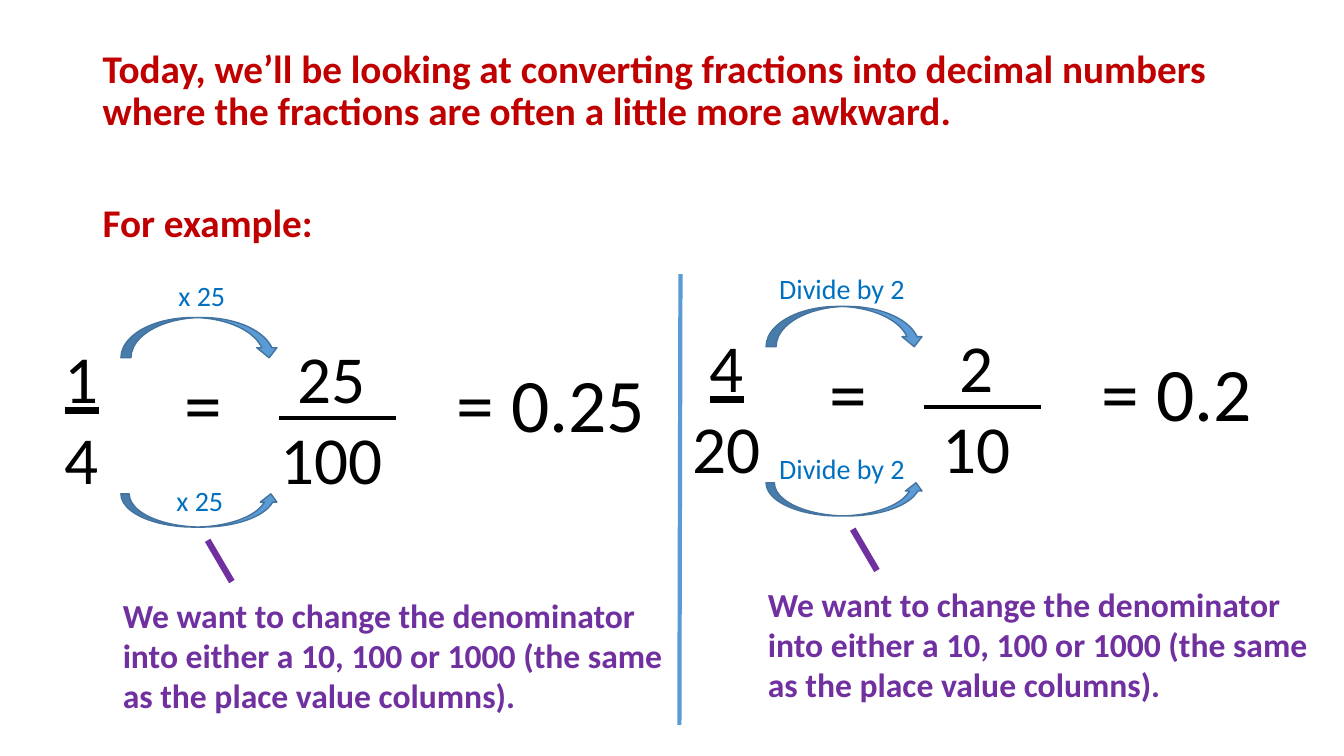
from dataclasses import dataclass

from lxml.etree import SubElement
from pptx import Presentation
from pptx.dml.color import RGBColor
from pptx.enum.shapes import MSO_CONNECTOR, MSO_SHAPE
from pptx.enum.text import PP_ALIGN
from pptx.oxml.ns import qn
from pptx.util import Inches, Pt

WIDTH, HEIGHT = Inches(13.33), Inches(7.5)


@dataclass(frozen=True)
class Theme:
    font: str = "Calibri"
    intro: str = "C00000"
    number: str = "000000"
    note: str = "7030A0"
    label: str = "0070C0"
    accent: str = "5B9BD5"
    accent_edge: str = "43739E"
    intro_size: int = 28
    fraction_size: int = 48
    equation_size: int = 54
    note_size: int = 24
    label_size: int = 20


@dataclass(frozen=True)
class Example:
    origin: tuple  # offset of the panel
    first: tuple  # numerator, denominator
    second: tuple
    result: str
    result_width: float
    step: str
    step_width: float
    upper_step: tuple  # left and top within the panel
    lower_step: tuple


THEME = Theme()
INTRO = ("Today, we’ll be looking at converting fractions into decimal numbers "
         "where the fractions are often a little more awkward.", "For example:")
NOTE = ("We want to change the denominator into either a 10, 100 or 1000 "
        "(the same as the place value columns).")
EXAMPLES = (
    Example((0, 0), ("1", "4"), ("25", "100"), "= 0.25", 29.25,
            "x 25", 5.78, (12.53, 36.13), (12.38, 63.33)),
    Example((48, -1.47), ("4", "20"), ("2", "10"), "= 0.2", 16.65,
            "Divide by 2", 12, (9.23, 36.67), (9.23, 60.54)),
)


# All positions and sizes are percentages of the slide
def across(share):
    return round(WIDTH * share / 100)


def down(share):
    return round(HEIGHT * share / 100)


def place(origin, left, top, width, height):
    return (across(origin[0] + left), down(origin[1] + top),
            across(width), down(height))


def add_text(slide, box, lines, size, color, bold=False, align=PP_ALIGN.LEFT):
    frame = slide.shapes.add_textbox(*box).text_frame
    frame.word_wrap = True
    frame.text = "\n".join(lines)
    for paragraph in frame.paragraphs:
        paragraph.alignment = align
        font = paragraph.runs[0].font
        font.name, font.size, font.bold = THEME.font, Pt(size), bold
        font.color.rgb = RGBColor.from_string(color)
    return frame


def add_line(slide, origin, start, end, color, weight):
    x, y = origin
    line = slide.shapes.add_connector(
        MSO_CONNECTOR.STRAIGHT, across(x + start[0]), down(y + start[1]),
        across(x + end[0]), down(y + end[1]))
    line.line.color.rgb = RGBColor.from_string(color)
    line.line.width = Pt(weight)
    SubElement(line._element.spPr, qn("a:effectLst"))


def add_curved_arrow(slide, kind, box):
    arrow = slide.shapes.add_shape(kind, *box)
    arrow.shadow.inherit = False
    arrow.fill.solid()
    arrow.fill.fore_color.rgb = RGBColor.from_string(THEME.accent)
    arrow.line.color.rgb = RGBColor.from_string(THEME.accent_edge)
    arrow.line.width = Pt(1)


def add_fraction(slide, origin, left, numbers):
    return add_text(slide, place(origin, left, 43.87, 9.6, 22.93), numbers,
                    THEME.fraction_size, THEME.number, align=PP_ALIGN.CENTER)


def add_intro(slide):
    intro = add_text(slide, place((0, 0), 6.9, 5.87, 86.25, 31.73), INTRO,
                     THEME.intro_size, THEME.intro, bold=True)
    for paragraph, gap in zip(intro.paragraphs, (10, 50)):
        paragraph.line_spacing = 0.9
        paragraph.space_before = Pt(gap)


def add_example(slide, example):
    origin = example.origin

    # Equation
    first = add_fraction(slide, origin, 1.28, example.first)
    first.paragraphs[0].runs[0].font.underline = True
    add_fraction(slide, origin, 19.88, example.second)
    add_line(slide, origin, (20.78, 55.33), (29.48, 55.33), THEME.number, 3)
    for left, width, text in ((12.98, 4.88, "="),
                              (33.23, example.result_width, example.result)):
        add_text(slide, place(origin, left, 46.53, width, 13.47), [text],
                 THEME.equation_size, THEME.number)

    # Step from one fraction to the next
    for kind, top, height, label in (
            (MSO_SHAPE.CURVED_DOWN_ARROW, 42, 5.33, example.upper_step),
            (MSO_SHAPE.CURVED_UP_ARROW, 65.33, 4.4, example.lower_step)):
        add_curved_arrow(slide, kind, place(origin, 9, top, 11.78, height))
        add_text(slide, place(origin, *label, example.step_width, 5.87),
                 [example.step], THEME.label_size, THEME.label)

    # Explanation
    add_line(slide, origin, (15.45, 71.47), (17.25, 76.93), THEME.note, 4.5)
    add_text(slide, place(origin, 8.4, 78, 42.23, 17.47), [NOTE],
             THEME.note_size, THEME.note, bold=True)


def main():
    deck = Presentation()
    deck.slide_width, deck.slide_height = WIDTH, HEIGHT
    slide = deck.slides.add_slide(deck.slide_layouts[6])
    add_intro(slide)
    for example in EXAMPLES:
        add_example(slide, example)
    # Divider between the two examples
    add_line(slide, (0, 0), (50.63, 36.27), (50.55, 95.87), THEME.accent, 3)
    deck.save("out.pptx")


if __name__ == "__main__":
    main()
